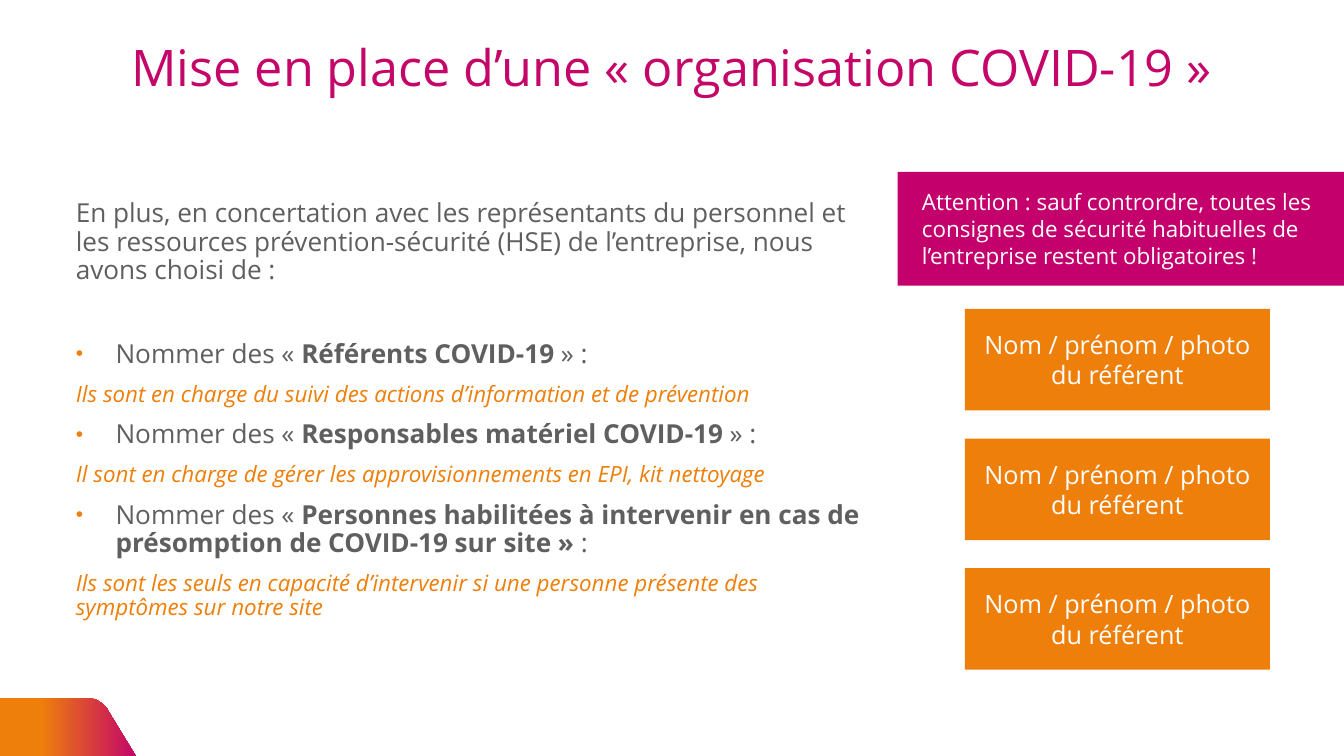
from lxml import etree
from pptx import Presentation
from pptx import util as u
from pptx.dml.color import RGBColor
from pptx.enum import shapes, text
from pptx.oxml.ns import qn

FONT = "Open Sans"
COLORS = {"magenta": "C40669", "banner": "C3006B", "orange": "EE7F0A",
          "grey": "5F5F5F", "white": "FFFFFF"}

TITLE = "Mise en place d’une « organisation COVID-19 »"
INTRO = ("En plus, en concertation avec les représentants du personnel et les ressources "
         "prévention-sécurité (HSE) de l’entreprise, nous avons choisi de :")
ROLES = [
    ("Référents COVID-19", " » :",
     "Ils sont en charge du suivi des actions d’information et de prévention"),
    ("Responsables matériel COVID-19 ", "» :",
     "Il sont en charge de gérer les approvisionnements en EPI, kit nettoyage"),
    ("Personnes habilitées à intervenir en cas de présomption de COVID-19 sur site » ", ":",
     "Ils sont les seuls en capacité d’intervenir si une personne présente des "
     "symptômes sur notre site"),
]
WARNING = ("Attention : sauf contrordre, toutes les consignes de sécurité habituelles "
           "de l’entreprise restent obligatoires !")
REFERENT = ["Nom / prénom / photo", "du référent"]
REFERENT_COUNT = 3
CORNER = [(0, 26.37), (3.2, 26.37), (3.4, 26.39), (3.66, 26.46), (3.87, 26.6),
          (4.04, 26.77), (4.09, 26.87), (5.13, 28.58), (0, 28.58)]


def rgb(name):
    return RGBColor.from_string(COLORS[name])


def style(r, size, color, bold=False, italic=False):
    f = r.font
    f.name, f.size, f.bold, f.italic = FONT, u.Pt(size), bold, italic
    f.color.rgb = rgb(color)


def add_rect(s, left, top, width, height, color):
    sp = s.shapes.add_shape(shapes.MSO_SHAPE.RECTANGLE,
                            u.Cm(left), u.Cm(top), u.Cm(width), u.Cm(height))
    sp.shadow.inherit = False
    sp.fill.solid()
    sp.fill.fore_color.rgb = rgb(color)
    sp.line.fill.background()
    return sp


def add_text(s, left, top, width, height, inset=None):
    tf = s.shapes.add_textbox(u.Cm(left), u.Cm(top), u.Cm(width), u.Cm(height)).text_frame
    tf.word_wrap = True
    if inset:
        tf.margin_left = tf.margin_right = tf.margin_top = tf.margin_bottom = u.Cm(inset)
    return tf


def add_bullet(p):
    pPr = p._p.get_or_add_pPr()
    pPr.set("marL", str(u.Cm(1.5)))
    pPr.set("indent", str(-u.Cm(1.5)))
    color = etree.SubElement(pPr, qn("a:buClr"))
    etree.SubElement(color, qn("a:srgbClr"), val=COLORS["orange"])
    etree.SubElement(pPr, qn("a:buSzPct"), val="80000")
    etree.SubElement(pPr, qn("a:buFont"), typeface="Arial")
    etree.SubElement(pPr, qn("a:buChar"), char="•")


def add_body_paragraph(tf, before):
    p = tf.add_paragraph()
    p.line_spacing, p.space_before = 0.9, u.Pt(before)
    return p


def add_corner(s):
    points = [(round(x * 100), round(y * 100)) for x, y in CORNER]
    fb = s.shapes.build_freeform(*points[0], scale=u.Cm(1) / 100)
    fb.add_line_segments(points[1:], close=True)
    sp = fb.convert_to_shape()
    sp.shadow.inherit = False
    sp.line.fill.background()
    sp.fill.gradient()
    sp.fill.gradient_angle = 0
    stops = [(0.3, "orange"), (1, "magenta")]
    for stop, (position, color) in zip(sp.fill.gradient_stops, stops):
        stop.position = position
        stop.color.rgb = rgb(color)


def add_title(s):
    tf = add_text(s, 1.4, 1.4, 48, 2.5, 0.51)
    tf.vertical_anchor = text.MSO_ANCHOR.MIDDLE
    tf.text = TITLE
    p = tf.paragraphs[0]
    p.alignment, p.line_spacing = text.PP_ALIGN.CENTER, 0.9
    style(p.runs[0], 54, "magenta")


def add_body(s):
    tf = add_text(s, 2.36, 7.06, 30.66, 20.24, 0.51)
    tf.text = INTRO
    p = tf.paragraphs[0]
    p.line_spacing = 0.9
    style(p.runs[0], 28, "grey")
    for i, (role, ending, duty) in enumerate(ROLES):
        p = add_body_paragraph(tf, 15 if i else 60)
        add_bullet(p)
        for part in ("Nommer des « ", role, ending):
            r = p.add_run()
            r.text = part
            style(r, 28, "grey", bold=part == role)
        p = add_body_paragraph(tf, 15)
        p.text = duty
        style(p.runs[0], 24, "orange", italic=True)


def add_referents(s):
    for i in range(REFERENT_COUNT):
        tf = add_rect(s, 36.47, 11.68 + 4.9 * i, 11.53, 3.84, "orange").text_frame
        tf.word_wrap = True
        tf.vertical_anchor = text.MSO_ANCHOR.MIDDLE
        tf.text = "\n".join(REFERENT)
        for p in tf.paragraphs:
            p.alignment = text.PP_ALIGN.CENTER
            style(p.runs[0], 27, "white")


def add_warning(s):
    add_rect(s, 33.93, 6.5, 16.87, 4.3, "banner")
    tf = add_text(s, 34.6, 6.99, 16.2, 3.33)
    tf.text = WARNING
    style(tf.paragraphs[0].runs[0], 24, "white")


def main():
    prs = Presentation()
    prs.slide_width, prs.slide_height = u.Cm(50.8), u.Cm(28.58)
    s = prs.slides.add_slide(prs.slide_layouts[6])
    add_corner(s)
    add_title(s)
    add_body(s)
    add_referents(s)
    add_warning(s)
    prs.save("out.pptx")


if __name__ == "__main__":
    main()
